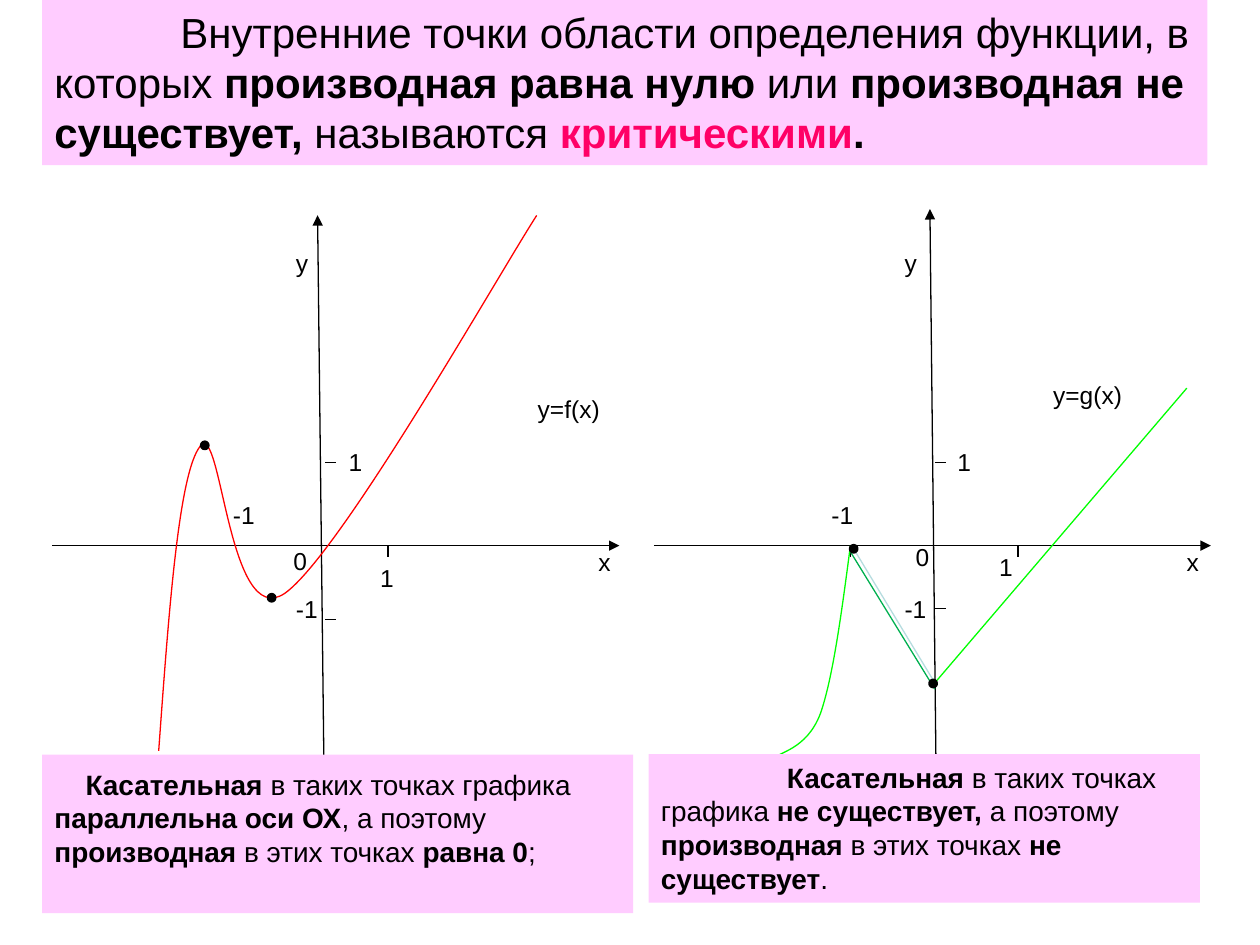
from lxml import etree
from pptx import Presentation
from pptx.dml.color import RGBColor
from pptx.enum import shapes as sh, text as tx
from pptx.oxml.ns import qn
from pptx.util import Pt

BLACK = RGBColor(0, 0, 0)
PINK = RGBColor(0xFF, 0xCC, 0xFF)
ROSE = RGBColor(0xFF, 0x00, 0x66)
RED = RGBColor(0xFF, 0, 0)
LIME = RGBColor(0, 0xFF, 0)
GREEN = RGBColor(0, 0xB0, 0x50)
PALE = RGBColor(0xB6, 0xDC, 0xDF)

TICK = 6.4
DOT = 3.6
LABEL_W = {1: 24.4, 2: 30.2, 6: 60}  # label width by number of letters


def add_run(par, words, size, bold=False, color=BLACK):
    run = par.add_run()
    run.text = words
    font = run.font
    font.name, font.size, font.bold = "Arial", Pt(size), bold
    font.color.rgb = color


def add_line(slide, box, start, end, color=BLACK, arrow=False):
    x, y = box
    line = slide.shapes.add_connector(
        sh.MSO_CONNECTOR.STRAIGHT,
        Pt(x + start[0]), Pt(y + start[1]), Pt(x + end[0]), Pt(y + end[1]))
    line.line.color.rgb = color
    line.line.width = Pt(0.75)
    if arrow:
        etree.SubElement(line.line._get_or_add_ln(), qn("a:tailEnd"), type="triangle")
    etree.SubElement(line._element.spPr, qn("a:effectLst"))


def add_curve(slide, box, points, color):
    """Draw Bezier arcs: a start, then two handles and an end for each arc."""
    spots = [(Pt(box[0] + x), Pt(box[1] + y)) for x, y in points]
    pen = slide.shapes.build_freeform(*spots[0])
    pen.add_line_segments(spots[1:], close=False)
    curve = pen.convert_to_shape()
    curve.fill.background()
    curve.line.color.rgb = color
    curve.line.width = Pt(0.75)
    curve.shadow.inherit = False
    steps = list(curve._element.iter(qn("a:lnTo")))
    track = steps[0].getparent()
    for i in range(0, len(steps), 3):
        arc = etree.SubElement(track, qn("a:cubicBezTo"))
        for step in steps[i:i + 3]:
            arc.append(step[0])
            track.remove(step)


def add_label(slide, box, words, x, y):
    label = slide.shapes.add_textbox(
        Pt(box[0] + x), Pt(box[1] + y), Pt(LABEL_W[len(words)]), Pt(24.2))
    label.text_frame.word_wrap = False
    add_run(label.text_frame.paragraphs[0], words, 14)


def add_dot(slide, box, x, y):
    """Place a dot by its centre."""
    dot = slide.shapes.add_shape(
        sh.MSO_SHAPE.OVAL, Pt(box[0] + x - DOT / 2), Pt(box[1] + y - DOT / 2),
        Pt(DOT), Pt(DOT))
    dot.fill.solid()
    dot.fill.fore_color.rgb = BLACK
    dot.line.color.rgb = BLACK
    dot.line.width = Pt(2)
    dot.shadow.inherit = False


def add_graph(slide, box, axes, across, up, curve, color, lines, labels, dots):
    """across: x of ticks on the x axis; up: y of ticks beside the y axis."""
    for start, end in axes:
        add_line(slide, box, start, end, arrow=True)
    base = axes[0][0][1]
    for x in across:
        add_line(slide, box, (x, base), (x, base + TICK))
    left, heights = up
    for y in heights:
        add_line(slide, box, (left, y), (left + TICK, y))
    add_curve(slide, box, curve, color)
    for start, end, tint in lines:
        add_line(slide, box, start, end, tint)
    for label in labels:
        add_label(slide, box, *label)
    for dot in dots:
        add_dot(slide, box, *dot)


def add_panel(slide, box, indent, size, runs, top=3.6):
    panel = slide.shapes.add_shape(sh.MSO_SHAPE.RECTANGLE, *map(Pt, box))
    panel.fill.solid()
    panel.fill.fore_color.rgb = PINK
    panel.line.fill.background()
    panel.shadow.inherit = False
    frame = panel.text_frame
    frame.word_wrap = True
    frame.vertical_anchor = tx.MSO_ANCHOR.TOP
    frame.margin_top = Pt(top)
    par = frame.paragraphs[0]
    par.alignment = tx.PP_ALIGN.LEFT
    props = par._p.get_or_add_pPr()
    props.set("marL", "0")
    props.set("indent", str(Pt(indent)))
    for words, *style in runs:
        add_run(par, words, size, *style)


def main():
    deck = Presentation()
    deck.slide_width, deck.slide_height = Pt(720), Pt(540)
    slide = deck.slides.add_slide(deck.slide_layouts[6])

    add_graph(
        slide, (30, 120),
        axes=[((0, 191.8), (324, 191.8)), ((155.4, 342), (151.5, 3))],
        across=[191.8], up=(155.8, [144.2, 234.2]),
        curve=[(60.7, 309.1), (66.5, 229.2), (72.2, 150), (84.5, 134.9),
               (96.7, 119.8), (100.3, 240.7), (132.7, 219.1),
               (164.4, 196.8), (254.4, 37.7), (276.7, 3.1)],
        color=RED, lines=[],
        labels=[("у", 132, 18.2), ("х", 304.8, 188.9), ("0", 130.6, 188.2),
                ("1", 162.2, 132), ("1", 180.2, 198.2), ("-1", 96, 162.2),
                ("-1", 132, 216.2), ("y=f(x)", 270.2, 101.8)],
        dots=[(87, 134.5), (125.2, 221.6)])

    low = (162.2, 270.2)
    add_graph(
        slide, (372, 120),
        axes=[((1.7, 191.8), (319.9, 191.8)), ((163, 329.3), (159.4, -0.5))],
        across=[114, 209.8], up=(162.2, [144.2, 227.8]),
        curve=[(114, 191.8), (109, 229.9), (103.9, 268.1), (96.7, 288.2),
               (88.8, 308.4), (73, 309.8), (68.6, 314.2)],
        color=LIME,
        lines=[(low, (306.2, 101.8), LIME), ((116.9, 195.4), low, PALE),
               ((114, 195.4), (162.2, 273.8), GREEN)],
        labels=[("у", 137.8, 18.2), ("х", 299, 188.9), ("0", 144.2, 186),
                ("1", 168, 132), ("1", 191.8, 191.8), ("-1", 96, 162.2),
                ("-1", 137.8, 216.2), ("y=g(x)", 222.7, 93.8)],
        dots=[(115.8, 193.6), (161.2, 270.6)])

    add_panel(slide, (24, 0, 666, 94.4), 72, 24, [
        ("Внутренние точки области определения функции, в которых ",),
        ("производная равна нулю ", True), ("или ",),
        ("производная не существует, ", True), ("называются ",),
        ("критическими", True, ROSE), (".", True)])
    add_panel(slide, (24, 431.2, 337.8, 90.6), 17.8, 16, [
        ("Касательная ", True), ("в таких точках графика ",),
        ("параллельна оси ОХ", True), (", а поэтому ",),
        ("производная", True), (" в этих точках ",),
        ("равна 0", True), (";",)], top=7.2)
    add_panel(slide, (370.6, 431, 315, 84.8), 72, 16, [
        ("Касательная ", True), ("в таких точках графика",),
        (" не существует, ", True), ("а поэтому",),
        (" производная", True), (" в этих точках ",),
        ("не существует", True), (".",)])

    deck.save("out.pptx")


if __name__ == "__main__":
    main()
